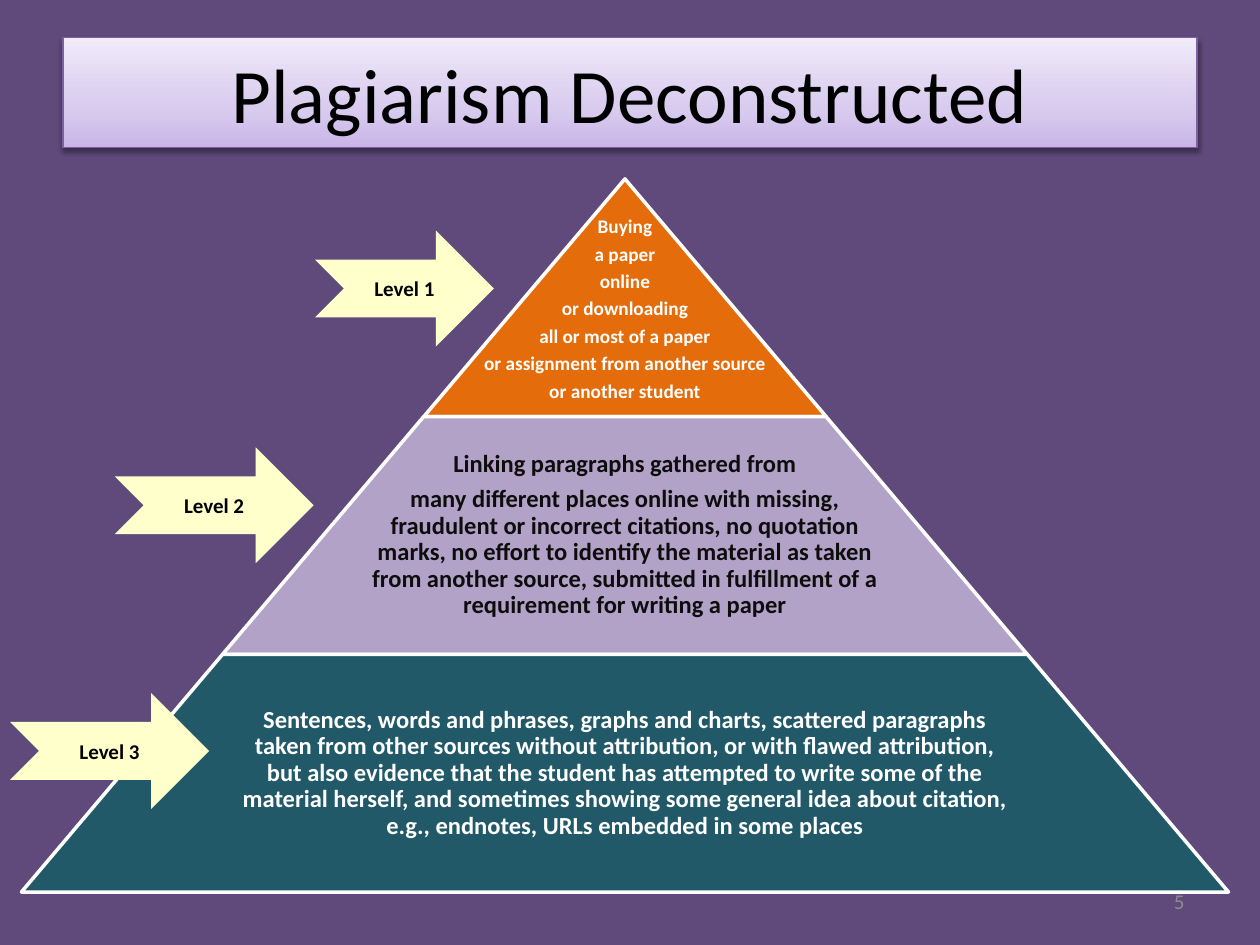
from copy import deepcopy
from dataclasses import dataclass

from lxml.etree import SubElement
from pptx import Presentation
from pptx.dml.color import RGBColor
from pptx.enum.shapes import MSO_SHAPE
from pptx.enum.text import MSO_ANCHOR, MSO_AUTO_SIZE, PP_ALIGN
from pptx.oxml.ns import qn
from pptx.util import Inches, Pt


@dataclass(frozen=True)
class Theme:
    """Colours, font and type sizes of the slide."""
    font: str = "Calibri"
    background: str = "604A7B"
    title_gradient: tuple = ((0, "C9B5E8"), (0.35, "D8CBEE"), (1, "F0EAF9"))
    title_line: str = "7D60A0"
    arrow: str = "FFFFCC"
    white: str = "FFFFFF"
    black: str = "000000"
    near_black: str = "0D0D0D"
    grey: str = "8C8C8C"
    orange: str = "E46C0A"
    lilac: str = "B3A2C7"
    teal: str = "215968"
    title_size: int = 44
    body_size: int = 14
    label_size: int = 12
    top_size: int = 11


THEME = Theme()

TIERS = (
    dict(fill=THEME.orange, color=THEME.white, size=THEME.top_size,
         text_share=1, top_inset=0.21,
         lines=("Buying", "a paper", "online", "or downloading",
                "all or most of a paper",
                "or assignment from another source",
                "or another student")),
    dict(fill=THEME.lilac, color=THEME.near_black, size=THEME.body_size,
         text_share=0.65, top_inset=0.02,
         lines=("Linking paragraphs gathered from",
                "many different places online with missing, fraudulent or "
                "incorrect citations, no quotation marks, no effort to "
                "identify the material as taken from another source, "
                "submitted in fulfillment of a requirement for writing a "
                "paper")),
    dict(fill=THEME.teal, color=THEME.white, size=THEME.body_size,
         text_share=0.65, top_inset=0.02,
         lines=("Sentences, words and phrases, graphs and charts, scattered "
                "paragraphs taken from other sources without attribution, or "
                "with flawed attribution, but also evidence that the student "
                "has attempted to write some of the material herself, and "
                "sometimes showing some general idea about citation, e.g., "
                "endnotes, URLs embedded in some places",)),
)

LEVELS = (
    ("Level 1", (2.5, 1.83, 1.42, 0.92)),
    ("Level 2", (0.91, 3.55, 1.58, 0.92)),
    ("Level 3", (0.08, 5.5, 1.58, 0.92)),
)


def rgb(code):
    """Turn a hex code into a colour."""
    return RGBColor.from_string(code)


def inches(box):
    """Turn left, top, width and height into lengths."""
    return [Inches(value) for value in box]


def write(frame, lines, size, color, bold=False, align=PP_ALIGN.CENTER):
    """Write one paragraph per line and return the paragraphs."""
    frame.word_wrap = True
    frame.auto_size = MSO_AUTO_SIZE.NONE
    frame.vertical_anchor = MSO_ANCHOR.MIDDLE
    for index, line in enumerate(lines):
        paragraph = frame.add_paragraph() if index else frame.paragraphs[0]
        paragraph.alignment = align
        run = paragraph.add_run()
        run.text = line
        run.font.name = THEME.font
        run.font.size = Pt(size)
        run.font.bold = bold
        run.font.color.rgb = rgb(color)
    return frame.paragraphs


def add_title(slide, box):
    """Fill the title placeholder and give it a gradient and a shadow."""
    title = slide.shapes.title
    title.left, title.top, title.width, title.height = inches(box)
    title.fill.gradient()
    title.fill.gradient_angle = 90
    properties = title._element.spPr
    stop_list = properties.find(".//" + qn("a:gsLst"))
    stop_list.append(deepcopy(stop_list[-1]))
    for stop, (position, color) in zip(title.fill.gradient_stops,
                                       THEME.title_gradient):
        stop.position = position
        stop.color.rgb = rgb(color)
    title.line.color.rgb = rgb(THEME.title_line)
    title.line.width = Pt(0.75)
    effects = SubElement(properties, qn("a:effectLst"))
    shadow = SubElement(effects, qn("a:outerShdw"), blurRad=str(Pt(3.1)),
                        dist=str(Pt(1.6)), dir="5400000", rotWithShape="0")
    shade = SubElement(shadow, qn("a:srgbClr"), val=THEME.black)
    SubElement(shade, qn("a:alpha"), val="38000")
    write(title.text_frame, ["Plagiarism Deconstructed"],
          THEME.title_size, THEME.black)


def add_tier(shapes, box, slope, tier):
    """Draw one tier of the pyramid with its text."""
    left, top, width, height = box
    band = shapes.add_shape(MSO_SHAPE.TRAPEZOID, *inches(box))
    band.adjustments[0] = slope
    band.shadow.inherit = False
    band.fill.solid()
    band.fill.fore_color.rgb = rgb(tier["fill"])
    band.line.color.rgb = rgb(THEME.white)
    band.line.width = Pt(2)

    text_width = width * tier["text_share"]
    text_left = left + (width - text_width) / 2
    text_box = shapes.add_textbox(*inches((text_left, top, text_width, height)))
    frame = text_box.text_frame
    frame.margin_left = frame.margin_right = frame.margin_bottom = Inches(0.02)
    frame.margin_top = Inches(tier["top_inset"])
    for paragraph in write(frame, tier["lines"], tier["size"], tier["color"],
                           bold=True):
        paragraph.line_spacing = 0.9
        paragraph.space_after = Pt(0.35 * tier["size"])


def add_pyramid(slide, box):
    """Stack the tiers so that their sides form one triangle."""
    left, top, width, height = box
    step, tier_height = width / len(TIERS), height / len(TIERS)
    group = slide.shapes.add_group_shape()
    for index, tier in enumerate(TIERS):
        tier_width = step * (index + 1)
        tier_box = (left + (width - tier_width) / 2,
                    top + index * tier_height, tier_width, tier_height)
        add_tier(group.shapes, tier_box, step / 2 / tier_height, tier)


def add_level(slide, box, label):
    """Draw a notched arrow naming a level."""
    arrow = slide.shapes.add_shape(MSO_SHAPE.NOTCHED_RIGHT_ARROW, *inches(box))
    arrow.shadow.inherit = False
    arrow.fill.solid()
    arrow.fill.fore_color.rgb = rgb(THEME.arrow)
    arrow.line.fill.background()
    write(arrow.text_frame, [label], THEME.label_size, THEME.black, bold=True)


def add_page_number(slide, box):
    """Write the page number at the right of its box."""
    page_number = slide.shapes.add_textbox(*inches(box))
    write(page_number.text_frame, ["5"], THEME.label_size, THEME.grey,
          align=PP_ALIGN.RIGHT)


def main():
    """Build the slide and save it."""
    deck = Presentation()
    deck.slide_width, deck.slide_height = Inches(10), Inches(7.5)
    slide = deck.slides.add_slide(deck.slide_layouts[5])
    slide.background.fill.solid()
    slide.background.fill.fore_color.rgb = rgb(THEME.background)
    add_title(slide, (0.5, 0.3, 9, 0.87))
    add_pyramid(slide, (0.17, 1.42, 9.58, 5.66))
    for label, box in LEVELS:
        add_level(slide, box, label)
    add_page_number(slide, (7.17, 6.95, 2.33, 0.4))
    deck.save("out.pptx")


if __name__ == "__main__":
    main()
